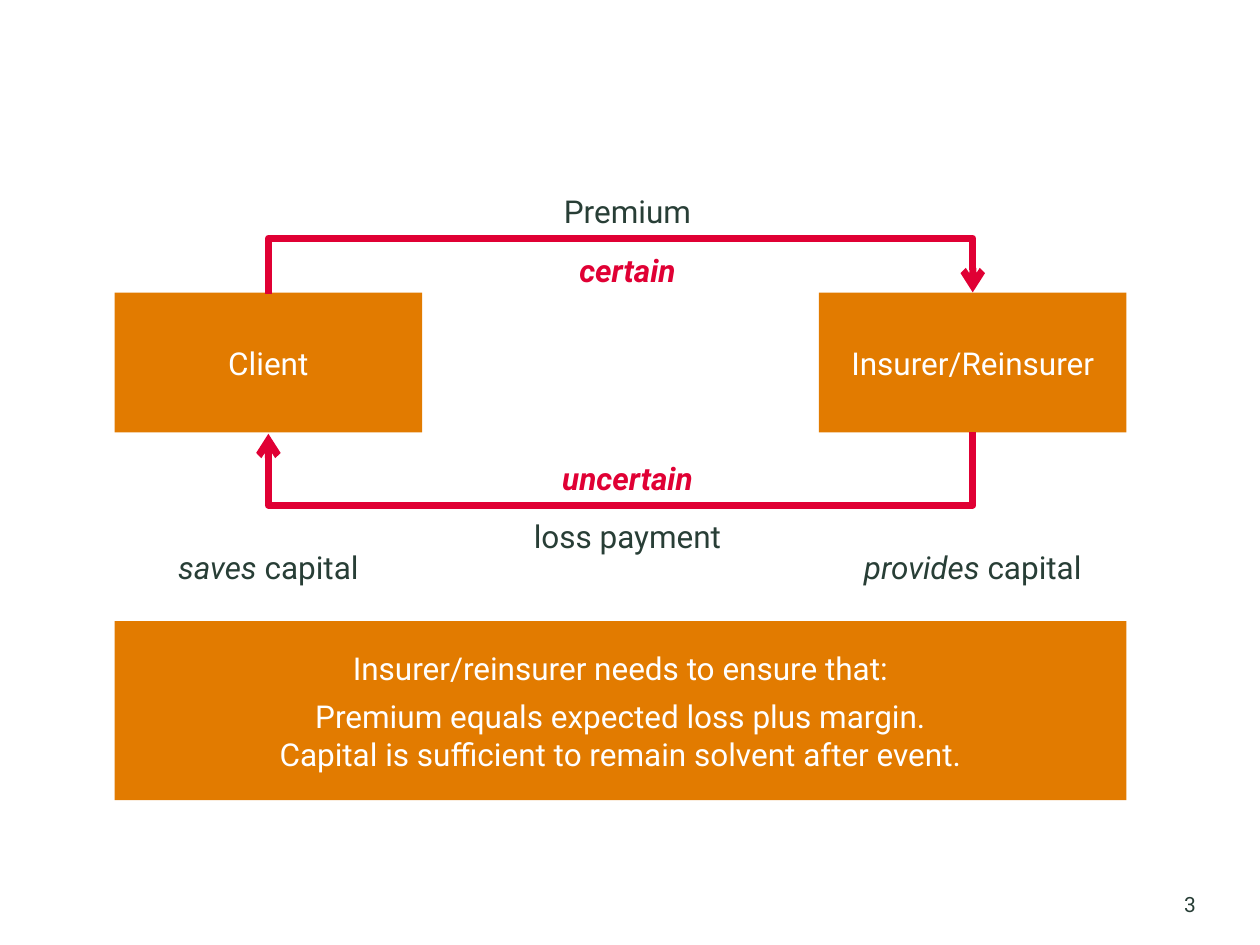
from lxml import etree
from pptx import Presentation
from pptx.dml.color import RGBColor
from pptx.enum import shapes, text
from pptx.oxml.ns import qn
from pptx.util import Cm, Pt

ORANGE = RGBColor(0xE2, 0x7B, 0x00)
RED = RGBColor(0xE0, 0x00, 0x34)
DARK = RGBColor(0x28, 0x3E, 0x36)
WHITE = RGBColor(0xFF, 0xFF, 0xFF)
CENTER = text.PP_ALIGN.CENTER


def add_run(p, words, size=18, color=DARK, bold=False, italic=False):
    """Append a formatted run to a paragraph."""
    r = p.add_run()
    r.text = words
    r.font.name, r.font.size = "Roboto", Pt(size)
    r.font.bold, r.font.italic = bold, italic
    r.font.color.rgb = color


def add_label(s, cx, y, w, *runs):
    """Add a one-line label centred on cx, from (words, format) runs."""
    sp = s.shapes.add_textbox(Cm(cx - w / 2), Cm(y), Cm(w), Cm(1.02))
    tf = sp.text_frame
    tf.word_wrap = False
    tf.auto_size = text.MSO_AUTO_SIZE.SHAPE_TO_FIT_TEXT
    p = tf.paragraphs[0]
    p.alignment = CENTER
    for words, fmt in runs:
        add_run(p, words, **fmt)


def add_block(s, x, y, w, h, *lines, gap=0):
    """Add an orange block with centred lines and a gap after the first."""
    sp = s.shapes.add_shape(shapes.MSO_SHAPE.RECTANGLE, Cm(x), Cm(y), Cm(w), Cm(h))
    sp.shadow.inherit = False
    sp.fill.solid()
    sp.fill.fore_color.rgb = ORANGE
    sp.line.fill.background()
    tf = sp.text_frame
    tf.word_wrap = True
    tf.vertical_anchor = text.MSO_ANCHOR.MIDDLE
    for i, words in enumerate(lines):
        p = tf.add_paragraph() if i else tf.paragraphs[0]
        p.alignment = CENTER
        add_run(p, words, color=WHITE)
    if gap:
        tf.paragraphs[0].space_after = Pt(gap)


def add_flow(s, x1, x2, y, reach, up):
    """Add a U-shaped arrow between x1 and x2 that reaches away from y."""
    thin, span = 0.03, x2 - x1
    left, top = (x1 + x2 - thin) / 2, y - span / 2
    ends = [(left, top), (left + thin, top + span)]
    start, end = reversed(ends) if up else ends
    sp = s.shapes.add_connector(shapes.MSO_CONNECTOR.ELBOW, *map(Cm, start + end))
    sp.line.color.rgb = RED
    sp.line.width = Pt(4)
    spPr = sp._element.spPr
    spPr.find(qn("a:xfrm")).set("rot", "5400000")
    guides = spPr.find(qn("a:prstGeom")).get_or_add_avLst()
    etree.SubElement(guides, qn("a:gd"), name="adj1",
                     fmla=f"val {round(reach / thin * 100000)}")
    etree.SubElement(sp.line._get_or_add_ln(), qn("a:tailEnd"), type="arrow")
    etree.SubElement(spPr, qn("a:effectLst"))


def add_cycle(s, x, y, w, h):
    """Draw the two parties, the flows between them and their labels."""
    party = 6.2
    client, insurer = x + party / 2, x + w - party / 2
    middle = x + w / 2 + 0.14
    add_block(s, x, y, party, h, "Client")
    add_block(s, x + w - party, y, party, h, "Insurer/Reinsurer")
    add_flow(s, client, insurer, y + 0.01, 1.12, up=True)
    add_flow(s, client, insurer, y + h + 0.01, 1.47, up=False)

    strong = dict(color=RED, bold=True, italic=True)
    add_label(s, middle, y - 2.16, 3.07, ("Premium", {}))
    add_label(s, middle, y - 0.96, 2.51, ("certain", strong))
    add_label(s, middle, y + 3.23, 3.25, ("uncertain", strong))
    add_label(s, middle, y + 4.4, 4.32, ("loss payment", {}))
    slanted = dict(italic=True)
    add_label(s, client, y + 5.03, 4.22, ("saves", slanted), (" capital", {}))
    add_label(s, insurer, y + 5.03, 5.03, ("provides ", slanted), ("capital", {}))


def add_number(s, x, y, w, h):
    """Write the page number at the right of its box."""
    tf = s.shapes.add_textbox(Cm(x), Cm(y), Cm(w), Cm(h)).text_frame
    tf.margin_left = tf.margin_right = tf.margin_top = tf.margin_bottom = 0
    tf.word_wrap = False
    tf.vertical_anchor = text.MSO_ANCHOR.BOTTOM
    p = tf.paragraphs[0]
    p.alignment = text.PP_ALIGN.RIGHT
    add_run(p, "3", size=12)


def main():
    """Build and save the slide."""
    prs = Presentation()
    prs.slide_width, prs.slide_height = Cm(25.4), Cm(19.05)
    s = prs.slides.add_slide(prs.slide_layouts[6])
    left, width = 2.31, 20.4
    add_cycle(s, left, 5.9, width, 2.82)
    add_block(s, left, 12.52, width, 3.61,
              "Insurer/reinsurer needs to ensure that:",
              "Premium equals expected loss plus margin.",
              "Capital is sufficient to remain solvent after event.", gap=6)
    add_number(s, 23.5, 17.98, 0.61, 0.51)
    prs.save("out.pptx")


if __name__ == "__main__":
    main()
